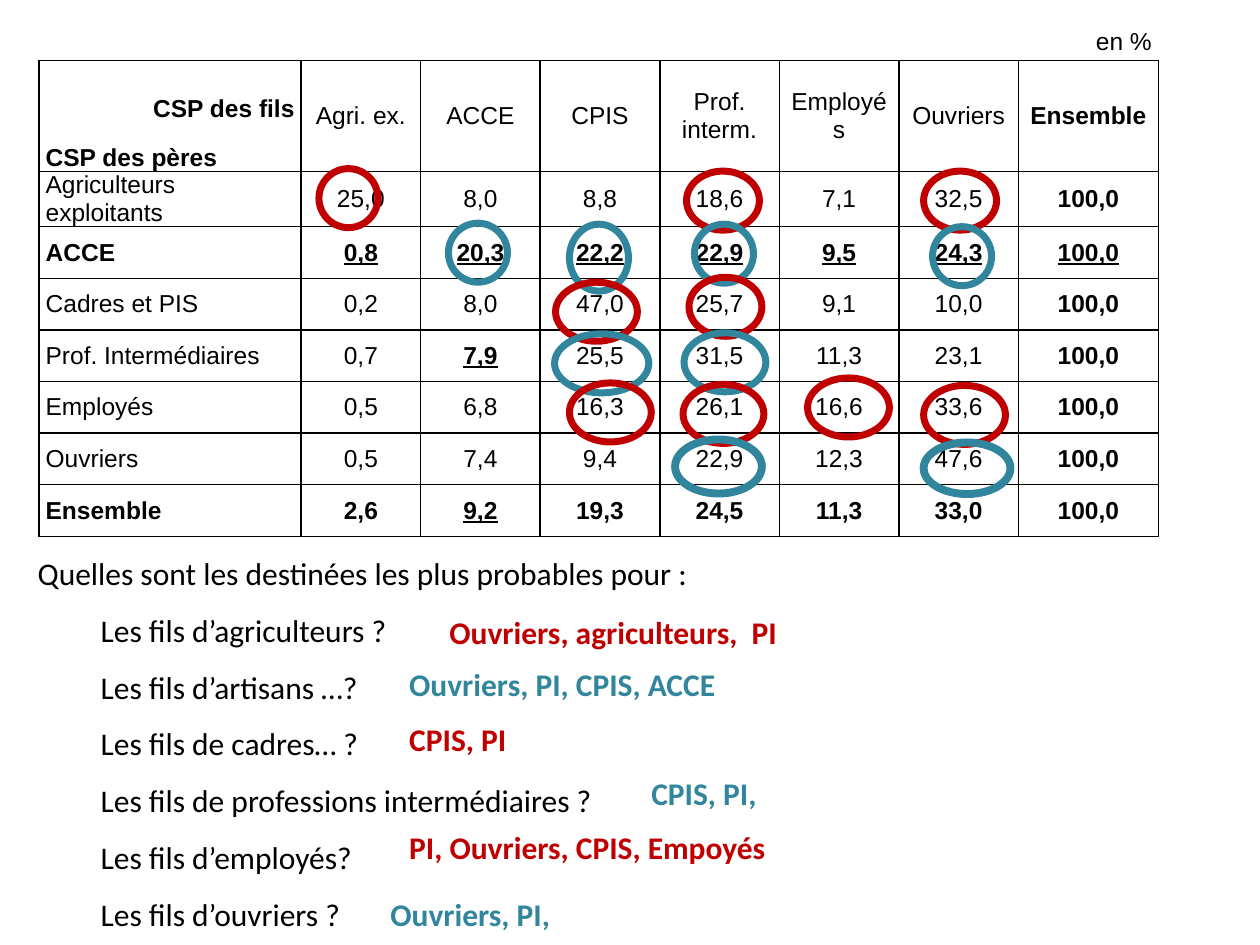
from pptx import Presentation
from pptx.dml.color import RGBColor
from pptx.enum.shapes import MSO_SHAPE as Geo
from pptx.enum.text import MSO_ANCHOR as Anchor, MSO_AUTO_SIZE as Fit, PP_ALIGN as Align
from pptx.oxml.ns import qn
from pptx.util import Cm, Pt
from lxml.etree import SubElement as Sub

BLACK = RGBColor(0x00, 0x00, 0x00)
RED = RGBColor(0xC0, 0x00, 0x00)
TEAL = RGBColor(0x31, 0x85, 0x9C)
GRID = {"name": "Arial", "size": Pt(14)}
BODY = {"name": "Calibri", "size": Pt(18)}
INSET = {"margin_left": Cm(0.13), "margin_right": Cm(0.13), "margin_top": 0, "margin_bottom": 0}


def write(para, text, tint, form):
    run = para.add_run()
    run.text = text
    run.font.color.rgb = tint
    for key, val in form.items():
        setattr(run.font, key, val)


def edge(cell, lined):
    props = cell._tc.get_or_add_tcPr()
    for side in "LRTB":
        line = Sub(props, qn("a:ln" + side), w=str(Pt(1)))
        if side in lined:
            Sub(Sub(line, qn("a:solidFill")), qn("a:srgbClr"), val=str(BLACK))
        else:
            Sub(line, qn("a:noFill"))


deck = Presentation()
deck.slide_width, deck.slide_height = Cm(25.4), Cm(19.05)
slide = deck.slides.add_slide(deck.slide_layouts[6])
shapes = slide.shapes

rows = [
    ["en %"],
    ["CSP des fils", "Agri. ex.", "ACCE", "CPIS", "Prof. interm.", "Employés", "Ouvriers", "Ensemble"],
    ["Agriculteurs exploitants", "25,0", "8,0", "8,8", "18,6", "7,1", "32,5", "100,0"],
    ["ACCE", "0,8", "20,3", "22,2", "22,9", "9,5", "24,3", "100,0"],
    ["Cadres et PIS", "0,2", "8,0", "47,0", "25,7", "9,1", "10,0", "100,0"],
    ["Prof. Intermédiaires", "0,7", "7,9", "25,5", "31,5", "11,3", "23,1", "100,0"],
    ["Employés", "0,5", "6,8", "16,3", "26,1", "16,6", "33,6", "100,0"],
    ["Ouvriers", "0,5", "7,4", "9,4", "22,9", "12,3", "47,6", "100,0"],
    ["Ensemble", "2,6", "9,2", "19,3", "24,5", "11,3", "33,0", "100,0"],
]
wides = [5.28] + [2.41] * 6 + [2.82]
highs = [0.74, 2.24] + [1.04] * 7
frame = shapes.add_table(9, 8, Cm(0.79), Cm(0.48), Cm(sum(wides)), Cm(sum(highs)))
table = frame.table
table.first_row = table.horz_banding = False
for col, wide in zip(table.columns, wides):
    col.width = Cm(wide)
for row, high in zip(table.rows, highs):
    row.height = Cm(high)
table.cell(0, 0).merge(table.cell(0, 7))

for r in range(9):
    for c in range(8):
        cell = table.cell(r, c)
        edge(cell, "LRTB" if r else "B")
        cell.fill.background()
        cell.vertical_anchor = Anchor.MIDDLE
        for key, val in INSET.items():
            setattr(cell, key, val)
        if c >= len(rows[r]):
            continue
        para = cell.text_frame.paragraphs[0]
        para.alignment = Align.CENTER if c else Align.LEFT
        bold = r in (3, 8) or (r, c) in ((1, 0), (5, 2)) or (c == 7 and r > 0)
        under = (r == 3 and c > 0) or (r, c) in ((5, 2), (8, 2))
        write(para, rows[r][c], BLACK, GRID | {"bold": bold, "underline": under})

table.cell(0, 0).text_frame.paragraphs[0].alignment = Align.RIGHT
corner = table.cell(1, 0)
corner.vertical_anchor = Anchor.BOTTOM
para = corner.text_frame.paragraphs[0]
para.alignment, para.space_after = Align.RIGHT, Pt(12)
para = corner.text_frame.add_paragraph()
para.alignment, para.space_after = Align.LEFT, Pt(3)
write(para, "CSP des pères", BLACK, GRID | {"bold": True})

asks = [
    "Les fils d’agriculteurs ?",
    "Les fils d’artisans …?",
    "Les fils de cadres… ?",
    "Les fils de professions intermédiaires ?",
    "Les fils d’employés?",
    "Les fils d’ouvriers ?",
]
text = shapes.add_textbox(Cm(0.51), Cm(11.05), Cm(24.21), Cm(7.67)).text_frame
text.word_wrap = True
write(text.paragraphs[0], "Quelles sont les destinées les plus probables pour :", BLACK, BODY)
for ask in asks:
    para = text.add_paragraph()
    para.level, para.line_spacing = 1, 1.5
    para._p.get_or_add_pPr().set("marL", str(Cm(1.27)))
    write(para, ask, BLACK, BODY)

replies = [
    ("Ouvriers, agriculteurs,  PI", RED, 8.81, 12.24, 8.79),
    ("Ouvriers, PI, CPIS, ACCE", TEAL, 8, 13.28, 8.79),
    ("CPIS, PI", RED, 8, 14.4, 8.79),
    ("CPIS, PI,", TEAL, 12.88, 15.47, 8.79),
    ("PI, Ouvriers, CPIS, Empoyés", RED, 8, 16.56, 8.79),
    ("Ouvriers, PI,", TEAL, 7.62, 17.91, 7.01),
]
for reply, tint, left, top, wide in replies:
    text = shapes.add_textbox(Cm(left), Cm(top), Cm(wide), Cm(1.02)).text_frame
    text.word_wrap, text.auto_size = True, Fit.SHAPE_TO_FIT_TEXT
    write(text.paragraphs[0], reply, tint, BODY | {"bold": True})

rings = [
    (RED, 4, [(18.62, 3.45, 1.47, 1.19), (13.84, 3.45, 1.47, 1.19), (6.43, 3.4, 1.19, 1.19)]),
    (TEAL, 4, [(18.8, 4.57, 1.19, 1.19), (9.04, 4.5, 1.19, 1.19),
               (14, 4.52, 1.19, 1.19), (11.48, 4.52, 1.19, 1.35)]),
    (RED, 4, [(13.89, 5.59, 1.47, 1.19), (11.2, 5.69, 1.65, 1.19)]),
    (TEAL, 4, [(13.79, 6.71, 1.65, 1.19), (11.18, 6.73, 1.9, 1.19)]),
    (RED, 4, [(13.77, 7.75, 1.63, 1.19), (11.48, 7.72, 1.65, 1.19),
              (18.62, 7.77, 1.65, 1.19), (16.28, 7.62, 1.65, 1.19)]),
    (TEAL, 4.5, [(18.62, 8.92, 1.75, 1.04), (13.61, 8.86, 1.75, 1.09)]),
]
for tint, thick, spots in rings:
    for spot in spots:
        ring = shapes.add_shape(Geo.OVAL, *map(Cm, spot))
        ring.shadow.inherit = False
        ring.fill.background()
        ring.line.color.rgb = tint
        ring.line.width = Pt(thick)

deck.save("out.pptx")
